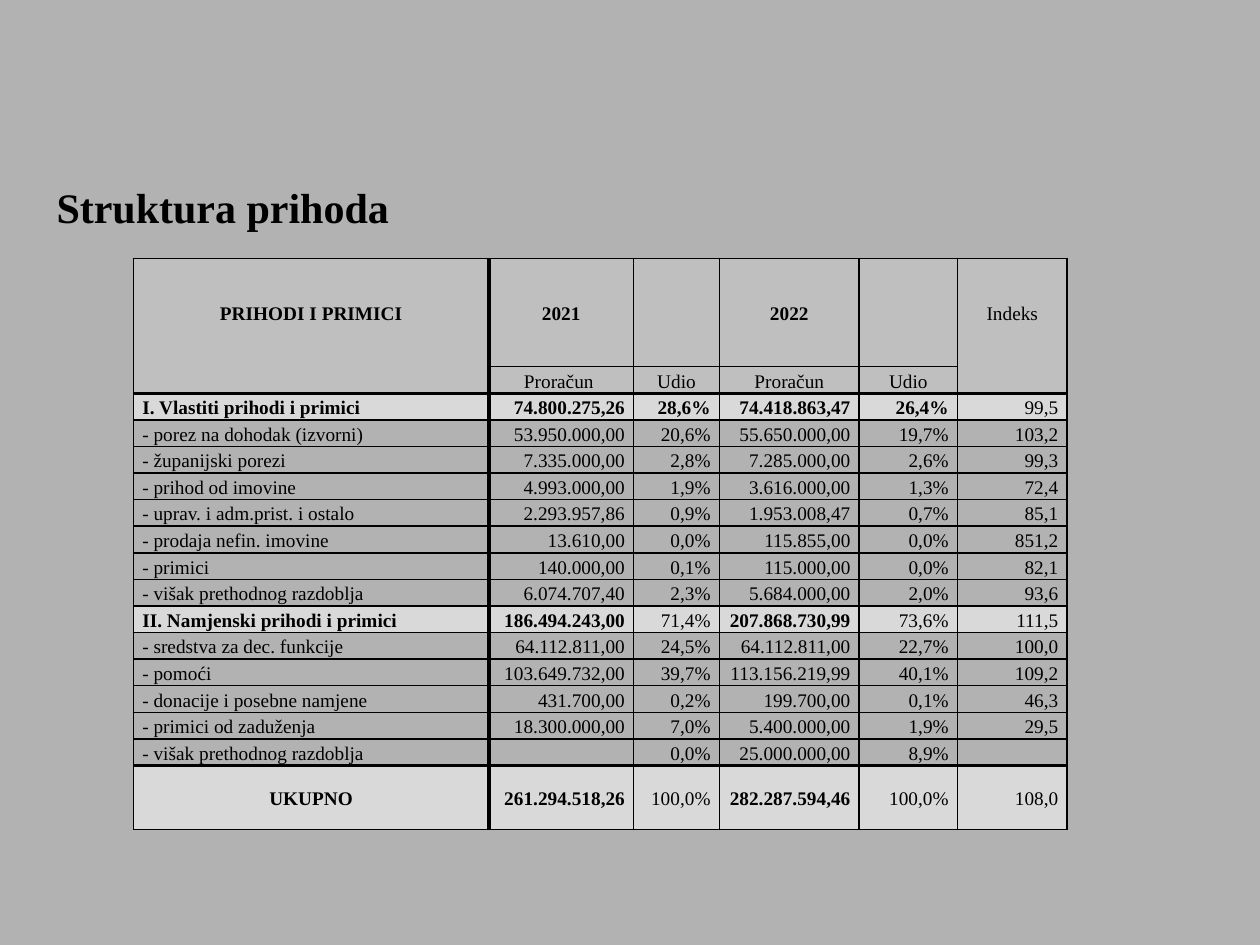
from lxml import etree
from pptx import Presentation
from pptx.dml.color import RGBColor
from pptx.enum.text import MSO_ANCHOR, PP_ALIGN
from pptx.oxml.ns import qn
from pptx.util import Inches, Pt

MIDDLE = MSO_ANCHOR.MIDDLE
LEFT, CENTER, RIGHT = PP_ALIGN.LEFT, PP_ALIGN.CENTER, PP_ALIGN.RIGHT

COLORS = {"background": "B2B2B2", "header": "BFBFBF", "subtotal": "D9D9D9", "ink": "000000"}
FONT = "Times New Roman"
BODY_SIZE = Pt(11)
THIN, THICK = Pt(1), Pt(2.25)

REVENUE = [
    ("PRIHODI I PRIMICI", "2021", "", "2022", "", "Indeks"),
    ("", "Proračun ", "Udio", "Proračun", "Udio", ""),
    ("I. Vlastiti prihodi i primici", "74.800.275,26", "28,6%", "74.418.863,47", "26,4%", "99,5"),
    ("- porez na dohodak (izvorni)", "53.950.000,00", "20,6%", "55.650.000,00", "19,7%", "103,2"),
    ("- županijski porezi", "7.335.000,00", "2,8%", "7.285.000,00", "2,6%", "99,3"),
    ("- prihod od imovine", "4.993.000,00", "1,9%", "3.616.000,00", "1,3%", "72,4"),
    ("- uprav. i adm.prist. i ostalo", "2.293.957,86", "0,9%", "1.953.008,47", "0,7%", "85,1"),
    ("- prodaja nefin. imovine", "13.610,00", "0,0%", "115.855,00", "0,0%", "851,2"),
    ("- primici", "140.000,00", "0,1%", "115.000,00", "0,0%", "82,1"),
    ("- višak prethodnog razdoblja", "6.074.707,40", "2,3%", "5.684.000,00", "2,0%", "93,6"),
    ("II. Namjenski prihodi i primici", "186.494.243,00", "71,4%", "207.868.730,99", "73,6%", "111,5"),
    ("- sredstva za dec. funkcije", "64.112.811,00", "24,5%", "64.112.811,00", "22,7%", "100,0"),
    ("- pomoći", "103.649.732,00", "39,7%", "113.156.219,99", "40,1%", "109,2"),
    ("- donacije i posebne namjene", "431.700,00", "0,2%", "199.700,00", "0,1%", "46,3"),
    ("- primici od zaduženja", "18.300.000,00", "7,0%", "5.400.000,00", "1,9%", "29,5"),
    ("- višak prethodnog razdoblja", "", "0,0%", "25.000.000,00", "8,9%", ""),
    ("UKUPNO", "261.294.518,26", "100,0%", "282.287.594,46", "100,0%", "108,0"),
]
COLUMN_WIDTHS = [2.82, 1.15, 0.68, 1.11, 0.78, 0.87]
HEADER_ROWS = 2
TOTAL_ROW = len(REVENUE) - 1
ROW_HEIGHTS = [0.86] + [0.21] * (TOTAL_ROW - 1) + [0.51]
SUBTOTAL_ROWS = {2, 10, TOTAL_ROW}
BOLD_COLUMNS = {0: range(5), 2: range(5), 10: (0, 1, 3), TOTAL_ROW: (0, 1, 3)}
THICK_ABOVE = {HEADER_ROWS, TOTAL_ROW}
SPANNING_HEADERS = {0, 5}


def color(name):
    """Return the named colour."""
    return RGBColor.from_string(COLORS[name])


def add_text(paragraph, text, size, bold):
    """Add one styled run to a paragraph."""
    run = paragraph.add_run()
    run.text = text
    run.font.name = FONT
    run.font.size = size
    run.font.bold = bold
    run.font.color.rgb = color("ink")


def draw_borders(cell, row, column):
    """Rule the four sides of a cell, leaving the spanning headers open between their rows."""
    open_header = column in SPANNING_HEADERS
    sides = {
        "a:lnL": THICK if column == 1 else THIN,
        "a:lnR": THICK if column == 0 else THIN,
        "a:lnT": THICK if row in THICK_ABOVE else None if open_header and row == 1 else THIN,
        "a:lnB": THICK if row + 1 in THICK_ABOVE else None if open_header and row == 0 else THIN,
    }
    properties = cell._tc.get_or_add_tcPr()
    for side, width in sides.items():
        line = etree.SubElement(properties, qn(side), w=str(width or 0))
        if width:
            fill = etree.SubElement(line, qn("a:solidFill"))
            etree.SubElement(fill, qn("a:srgbClr"), val=COLORS["ink"])
        else:
            etree.SubElement(line, qn("a:noFill"))


def fill_cell(cell, row, column, text):
    """Style one cell by its row and column and write its text."""
    draw_borders(cell, row, column)
    if row < HEADER_ROWS or row in SUBTOTAL_ROWS:
        cell.fill.solid()
        cell.fill.fore_color.rgb = color("header" if row < HEADER_ROWS else "subtotal")
    else:
        cell.fill.background()
    cell.vertical_anchor = MIDDLE
    cell.margin_left = cell.margin_right = Inches(0.07)
    cell.margin_top = cell.margin_bottom = 0
    paragraph = cell.text_frame.paragraphs[0]
    paragraph.line_spacing = 1.15
    if row < HEADER_ROWS or (row == TOTAL_ROW and column == 0):
        paragraph.alignment = CENTER
    else:
        paragraph.alignment = LEFT if column == 0 else RIGHT
    if text:
        add_text(paragraph, text, BODY_SIZE, column in BOLD_COLUMNS.get(row, ()))
    else:
        etree.SubElement(paragraph._p, qn("a:endParaRPr"), sz=str(int(BODY_SIZE.pt * 100)))


def add_heading(slide, left, top, width, height):
    """Place the slide heading in the given box."""
    frame = slide.shapes.add_textbox(left, top, width, height).text_frame
    frame.word_wrap = True
    add_text(frame.paragraphs[0], "Struktura prihoda", Pt(24), True)


def add_revenue_table(slide, left, top, width, height):
    """Place the revenue table in the given box."""
    table = slide.shapes.add_table(
        len(REVENUE), len(COLUMN_WIDTHS), left, top, width, height
    ).table
    table.first_row = table.horz_banding = False
    for column, column_width in zip(table.columns, COLUMN_WIDTHS):
        column.width = Inches(column_width)
    for row, row_height in zip(table.rows, ROW_HEIGHTS):
        row.height = Inches(row_height)
    for row, entries in enumerate(REVENUE):
        for column, text in enumerate(entries):
            fill_cell(table.cell(row, column), row, column, text)


def main():
    """Build the revenue structure slide."""
    presentation = Presentation()
    presentation.slide_width, presentation.slide_height = Inches(10), Inches(7.5)
    slide = presentation.slides.add_slide(presentation.slide_layouts[6])
    slide.background.fill.solid()
    slide.background.fill.fore_color.rgb = color("background")
    add_heading(slide, Inches(0.35), Inches(1.39), Inches(9.51), Inches(5.56))
    add_revenue_table(slide, Inches(1.06), Inches(2.05), Inches(7.4), Inches(4.54))
    presentation.save("out.pptx")


if __name__ == "__main__":
    main()
